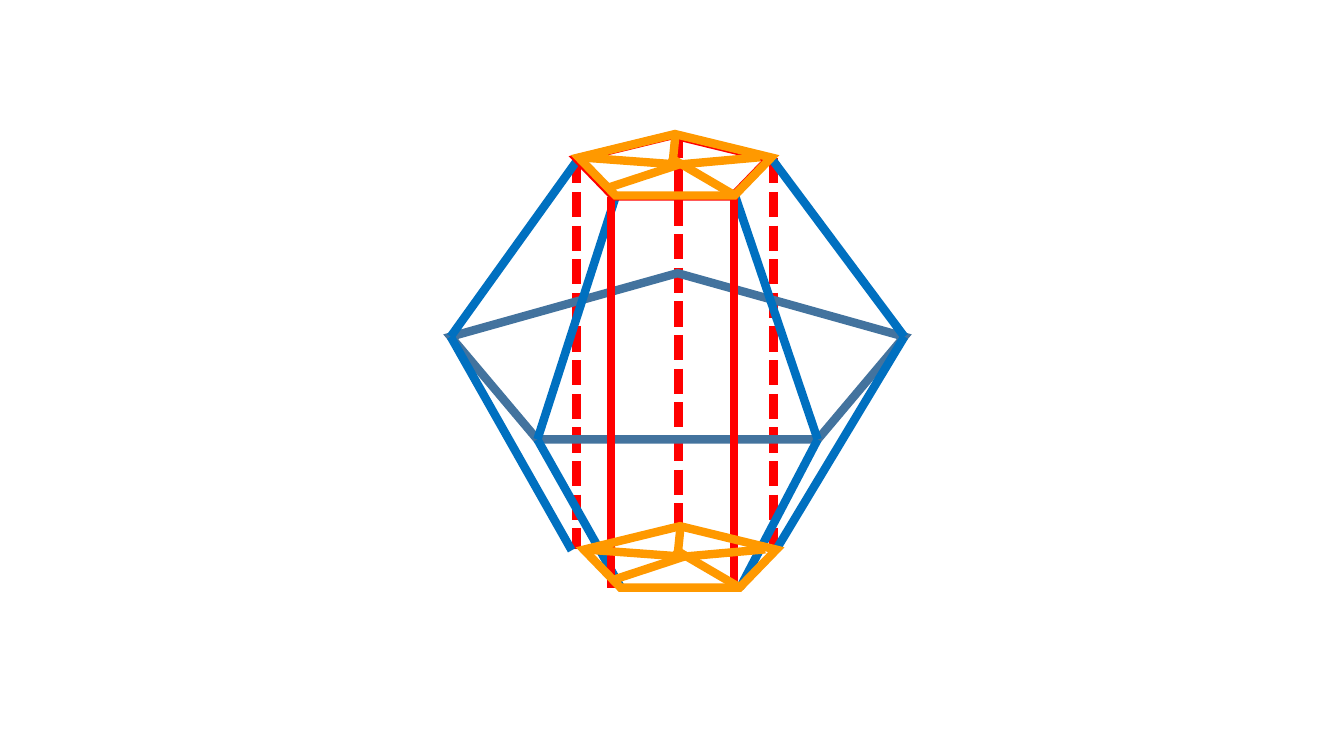
"""Build a slide with a wireframe gem: a wide girdle, two caps and upright pillars."""
from lxml import etree
from pptx import Presentation
from pptx.dml.color import RGBColor
from pptx.enum.dml import MSO_LINE
from pptx.enum.shapes import MSO_CONNECTOR, MSO_SHAPE
from pptx.oxml.ns import qn
from pptx.util import Inches, Pt

PENTAGON = MSO_SHAPE.REGULAR_PENTAGON
STRAIGHT = MSO_CONNECTOR.STRAIGHT
DASHED = MSO_LINE.SQUARE_DOT

SLIDE_SIZE = (13.33, 7.5)
LINE_WIDTH = 6
RED, BLUE, STEEL, ORANGE = "FF0000", "0070C0", "43739E", "FF9900"

GIRDLE_CORNER, GIRDLE_SIZE = (4.47, 2.71), (4.5, 1.65)
CAP_SIZE = (1.91, 0.61)
RED_CAP_CORNER = (5.72, 1.34)
ORANGE_CAP_CORNERS = [(5.79, 5.22), (5.74, 1.33)]

PILLAR_HEIGHT = 3.88
BACK_PILLARS = [(6.73, 1.32), (7.67, 1.57), (5.72, 1.57)]
FRONT_PILLARS = [(6.06, 1.95), (7.28, 1.95)]

LEFT, RIGHT = (4.47, 3.34), (8.97, 3.34)
FRONT_LEFT, FRONT_RIGHT = (5.33, 4.36), (8.11, 4.36)
GEM_EDGES = [
    ((7.65, 1.57), RIGHT),
    ((5.74, 1.57), LEFT),
    ((6.11, 1.94), FRONT_LEFT),
    ((7.29, 1.94), FRONT_RIGHT),
    (FRONT_LEFT, (6.16, 5.83)),
    (FRONT_RIGHT, (7.34, 5.83)),
    (RIGHT, (7.7, 5.45)),
    (LEFT, (5.67, 5.46)),
]
CAP_SPOKES = [
    ((0.9, 0.23), (1.55, 0.61)),
    ((1.02, 0.3), (1.8, 0.23)),
    ((1, 0.3), (0.27, 0.54)),
    ((0.95, 0.3), (0, 0.23)),
    ((0.93, 0.3), (0.96, 0)),
]


def style_line(line, color):
    line.color.rgb = RGBColor.from_string(color)
    line.width = Pt(LINE_WIDTH)


def add_edge(shapes, start, end, color, dash=None):
    edge = shapes.add_connector(STRAIGHT, *map(Inches, start + end))
    style_line(edge.line, color)
    if dash is not None:
        edge.line.dash_style = dash
    etree.SubElement(edge._element.spPr, qn("a:effectLst"))


def add_pentagon(shapes, corner, size, color):
    pentagon = shapes.add_shape(PENTAGON, *map(Inches, corner + size))
    pentagon.shadow.inherit = False
    pentagon.fill.background()
    style_line(pentagon.line, color)
    outline = pentagon._element.spPr.find(qn("a:ln"))
    etree.SubElement(outline, qn("a:miter"), lim="800000")


def add_pillars(shapes, tops, dash=None):
    for x, y in tops:
        add_edge(shapes, (x, y), (x, y + PILLAR_HEIGHT), RED, dash)


def add_cap(shapes, corner):
    cap = shapes.add_group_shape().shapes
    add_pentagon(cap, corner, CAP_SIZE, ORANGE)
    for spoke in CAP_SPOKES:
        start, end = [(corner[0] + x, corner[1] + y) for x, y in spoke]
        add_edge(cap, start, end, ORANGE)


def main():
    deck = Presentation()
    deck.slide_width, deck.slide_height = map(Inches, SLIDE_SIZE)
    shapes = deck.slides.add_slide(deck.slide_layouts[6]).shapes
    add_pillars(shapes, BACK_PILLARS, DASHED)
    add_pentagon(shapes, GIRDLE_CORNER, GIRDLE_SIZE, STEEL)
    for start, end in GEM_EDGES:
        add_edge(shapes, start, end, BLUE)
    add_pentagon(shapes, RED_CAP_CORNER, CAP_SIZE, RED)
    add_pillars(shapes, FRONT_PILLARS)
    for corner in ORANGE_CAP_CORNERS:
        add_cap(shapes, corner)
    deck.save("out.pptx")


if __name__ == "__main__":
    main()
